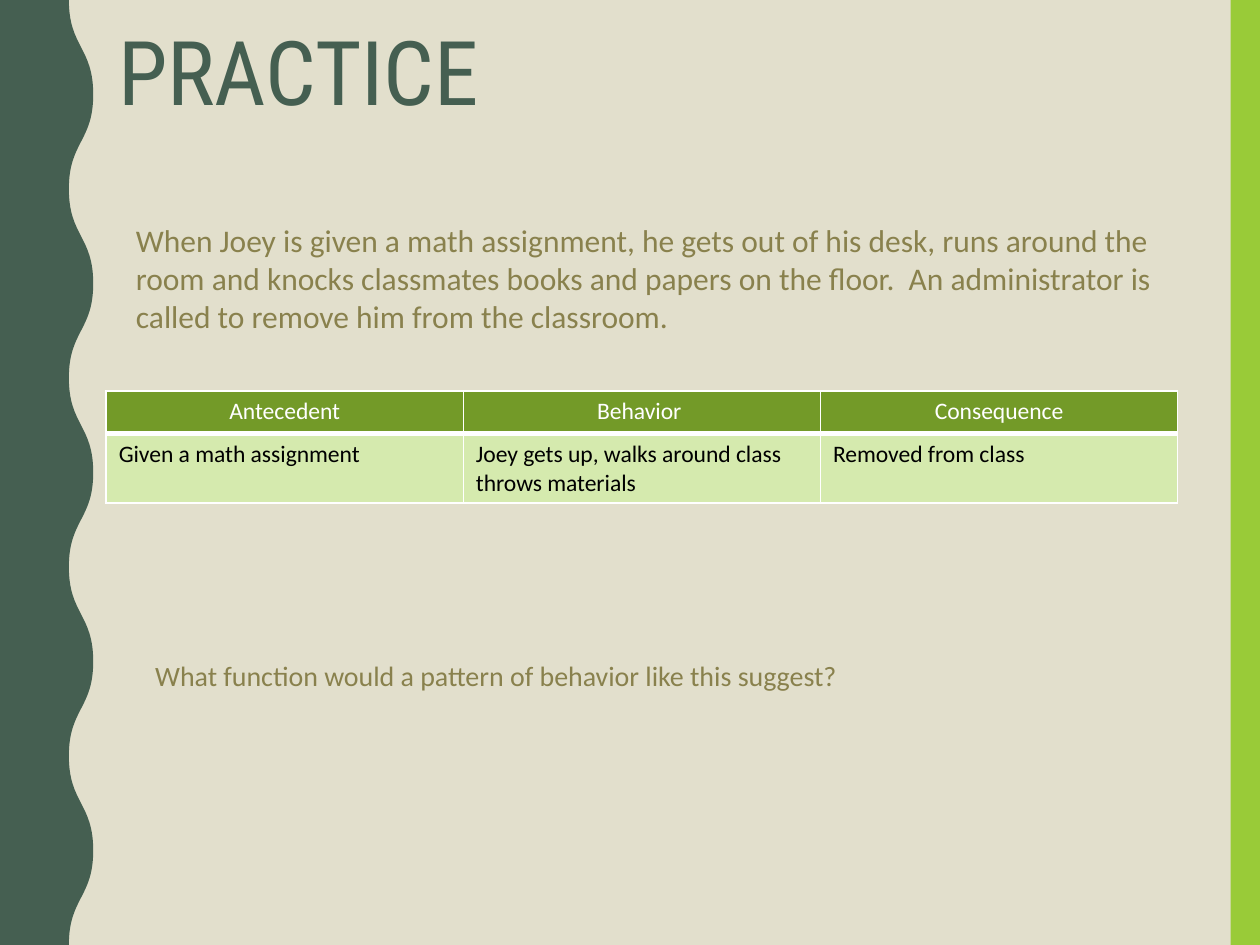
"""Build the behavior practice slide with its wavy border and ABC table."""
import dataclasses

import lxml.etree
import pptx
import pptx.dml.color
import pptx.enum.shapes
import pptx.enum.text
import pptx.oxml.ns
import pptx.shapes.base
import pptx.slide
import pptx.table
import pptx.text.text
import pptx.util

Cm = pptx.util.Cm
Align = pptx.enum.text.PP_ALIGN
qn = pptx.oxml.ns.qn


@dataclasses.dataclass(frozen=True)
class Theme:
    background: str = "E2DFCC"
    lime: str = "99CB38"
    forest: str = "455F51"
    olive: str = "89814D"
    header_fill: str = "739A28"
    body_fill: str = "D5EAAE"
    white: str = "FFFFFF"
    black: str = "000000"
    title_font: str = "Roboto Condensed"
    body_font: str = "Calibri"
    title_size: float = 51
    story_size: float = 18
    question_size: float = 16
    table_size: float = 13.5
    thin_border: float = 1
    header_border: float = 3


@dataclasses.dataclass(frozen=True)
class TextStyle:
    font: str
    size: float
    color: str
    align: Align = Align.LEFT
    line_spacing: float = 1.0


@dataclasses.dataclass(frozen=True)
class TextBlock:
    text: str
    left: float
    top: float
    width: float
    height: float
    style: TextStyle


@dataclasses.dataclass(frozen=True)
class TableRow:
    texts: tuple[str, ...]
    height: float
    fill: str
    style: TextStyle
    top_border: float
    bottom_border: float


THEME = Theme()
PAGE_WIDTH, PAGE_HEIGHT = 25.4, 19.05
STRIPE_WIDTH = 0.59
WAVE_INNER, WAVE_OUTER, HALF_WAVES = 1.39, 1.88, 10
TABLE_LEFT, TABLE_TOP, COLUMN_WIDTH = 2.14, 7.88, 7.2

STORY = TextBlock(
    "When Joey is given a math assignment, he gets out of his desk, runs around the "
    "room and knocks classmates books and papers on the floor.  An administrator is "
    "called to remove him from the classroom.",
    2.49, 4.33, 22.2, 2.57,
    TextStyle(THEME.body_font, THEME.story_size, THEME.olive),
)
QUESTION = TextBlock(
    "What function would a pattern of behavior like this suggest?",
    2.88, 13.16, 14.43, 0.94,
    TextStyle(THEME.body_font, THEME.question_size, THEME.olive),
)
TITLE = TextBlock(
    "PRACTICE", 2.13, 0.44, 21.21, 4.14,
    TextStyle(THEME.title_font, THEME.title_size, THEME.forest, line_spacing=0.9),
)

ROWS = (
    TableRow(
        ("Antecedent", "Behavior ", "Consequence"), 0.86, THEME.header_fill,
        TextStyle(THEME.body_font, THEME.table_size, THEME.white, Align.CENTER),
        THEME.thin_border, THEME.header_border,
    ),
    TableRow(
        ("Given a math assignment", "Joey gets up, walks around class throws materials",
         "Removed from class"), 0.84, THEME.body_fill,
        TextStyle(THEME.body_font, THEME.table_size, THEME.black),
        THEME.header_border, THEME.thin_border,
    ),
)


def rgb(color: str) -> pptx.dml.color.RGBColor:
    return pptx.dml.color.RGBColor.from_string(color)


def paint(shape: pptx.shapes.base.BaseShape, color: str) -> None:
    shape.fill.solid()
    shape.fill.fore_color.rgb = rgb(color)
    shape.line.fill.background()
    shape.shadow.inherit = False


def write(frame: pptx.text.text.TextFrame, text: str, style: TextStyle) -> None:
    frame.word_wrap = True
    para = frame.paragraphs[0]
    para.alignment = style.align
    para.line_spacing = style.line_spacing
    span = para.add_run()
    span.text = text
    span.font.name = style.font
    span.font.size = pptx.util.Pt(style.size)
    span.font.color.rgb = rgb(style.color)


def add_stripe(page: pptx.slide.Slide) -> None:
    stripe = page.shapes.add_shape(
        pptx.enum.shapes.MSO_SHAPE.RECTANGLE,
        Cm(PAGE_WIDTH - STRIPE_WIDTH), 0, Cm(STRIPE_WIDTH), Cm(PAGE_HEIGHT),
    )
    paint(stripe, THEME.lime)


def add_wave(page: pptx.slide.Slide) -> None:
    edges = (Cm(WAVE_INNER), Cm(WAVE_OUTER))
    step = Cm(PAGE_HEIGHT / HALF_WAVES)
    knots = [(edges[index % 2], index * step) for index in range(HALF_WAVES + 1)]
    builder = page.shapes.build_freeform(*knots[0])
    builder.add_line_segments([*knots[1:], (0, Cm(PAGE_HEIGHT)), (0, 0)], close=True)
    wave = builder.convert_to_shape()
    segments = list(wave.element.iter(qn("a:lnTo")))
    for segment, start, end in zip(segments, knots, knots[1:]):
        middle = (start[1] + end[1]) // 2
        curve = lxml.etree.Element(qn("a:cubicBezTo"))
        for across, down in ((start[0], middle), (end[0], middle), end):
            lxml.etree.SubElement(curve, qn("a:pt"), x=str(across), y=str(down))
        segment.getparent().replace(segment, curve)
    paint(wave, THEME.forest)


def add_block(page: pptx.slide.Slide, block: TextBlock) -> None:
    box = page.shapes.add_textbox(
        Cm(block.left), Cm(block.top), Cm(block.width), Cm(block.height)
    )
    write(box.text_frame, block.text, block.style)


def set_borders(cell: pptx.table._Cell, row: TableRow) -> None:
    properties = cell._tc.get_or_add_tcPr()
    widths = {"L": THEME.thin_border, "R": THEME.thin_border,
              "T": row.top_border, "B": row.bottom_border}
    for position, (side, width) in enumerate(widths.items()):
        line = lxml.etree.Element(qn(f"a:ln{side}"), w=str(pptx.util.Pt(width)))
        fill = lxml.etree.SubElement(line, qn("a:solidFill"))
        lxml.etree.SubElement(fill, qn("a:srgbClr"), val=THEME.white)
        properties.insert(position, line)


def add_behavior_table(page: pptx.slide.Slide) -> None:
    columns = len(ROWS[0].texts)
    table = page.shapes.add_table(
        len(ROWS), columns, Cm(TABLE_LEFT), Cm(TABLE_TOP),
        Cm(COLUMN_WIDTH * columns), Cm(sum(row.height for row in ROWS)),
    ).table
    table.first_row = table.horz_banding = False
    for column in table.columns:
        column.width = Cm(COLUMN_WIDTH)
    for row_index, row in enumerate(ROWS):
        table.rows[row_index].height = Cm(row.height)
        for column_index, text in enumerate(row.texts):
            cell = table.cell(row_index, column_index)
            write(cell.text_frame, text, row.style)
            cell.fill.solid()
            cell.fill.fore_color.rgb = rgb(row.fill)
            set_borders(cell, row)


def main() -> None:
    deck = pptx.Presentation()
    deck.slide_width, deck.slide_height = Cm(PAGE_WIDTH), Cm(PAGE_HEIGHT)
    page = deck.slides.add_slide(deck.slide_layouts[6])
    page.background.fill.solid()
    page.background.fill.fore_color.rgb = rgb(THEME.background)
    add_stripe(page)
    add_wave(page)
    add_block(page, STORY)
    add_block(page, QUESTION)
    add_behavior_table(page)
    add_block(page, TITLE)
    deck.save("out.pptx")


if __name__ == "__main__":
    main()
